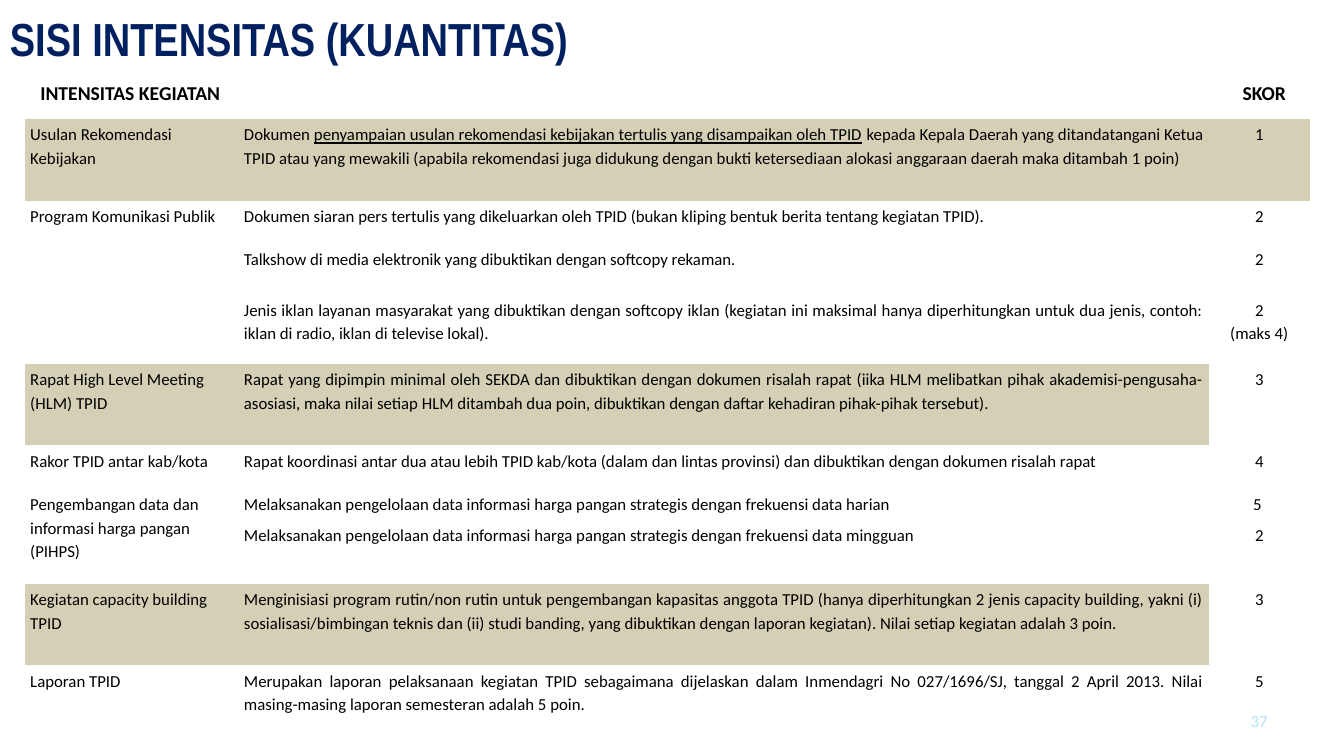
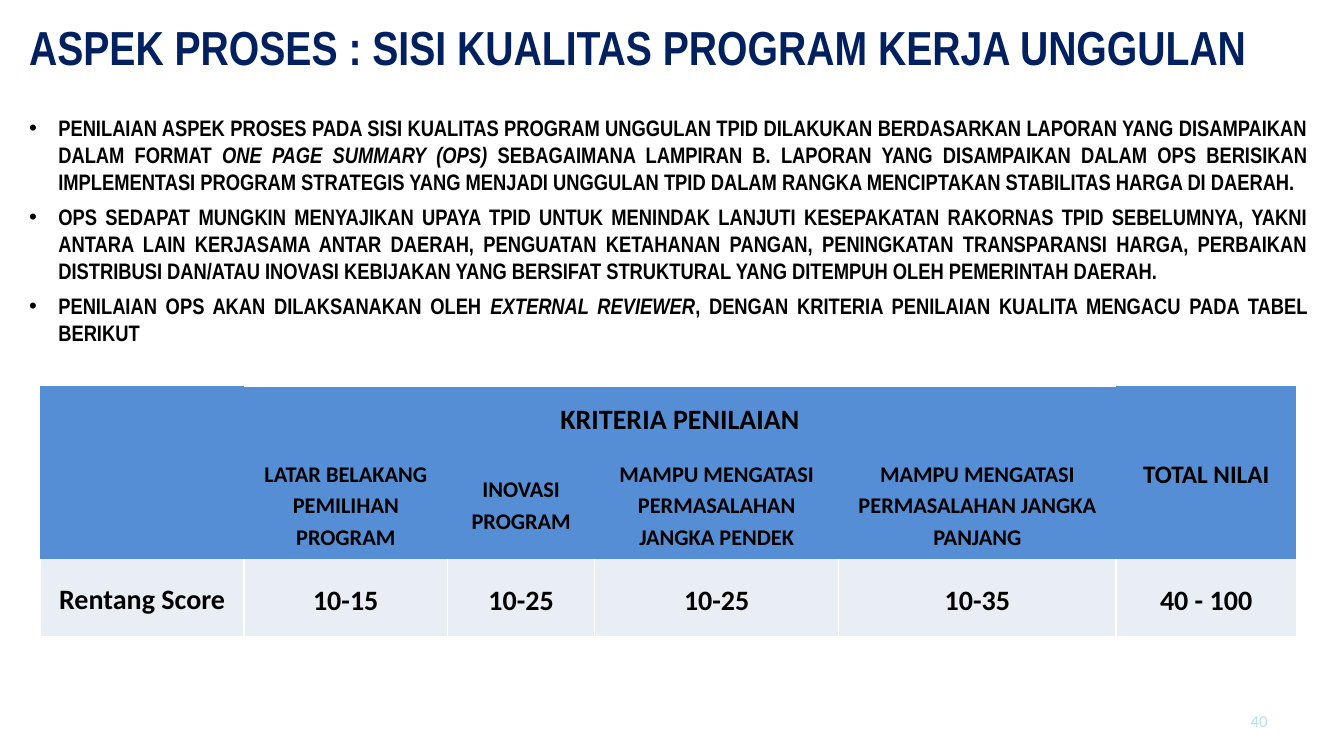
from pptx import Presentation as Deck
from pptx.dml.color import RGBColor as Rgb
from pptx.enum.text import MSO_ANCHOR as Anchor, PP_ALIGN as Align
from pptx.oxml.ns import qn
from pptx.util import Inches, Pt
from lxml.etree import SubElement as Sub

HUES = {"navy": "002060", "black": "000000", "pale": "B1E2FB", "sand": "D5D0B5",
        "blue": "558ED5", "mist": "E9EDF4", "white": "FFFFFF"}
BARE = "{2D5ABB26-0587-4C30-8999-92F81FD0307C}"  # table style without fill or grid
HEAD, BODY = "Arial Narrow", "Calibri"
EDGES = {"l": "a:lnL", "r": "a:lnR", "t": "a:lnT", "b": "a:lnB"}

# Texts: parts between bars carry the mark (underline or italic)
TASKS = [
    ("Usulan Rekomendasi Kebijakan",
     "Dokumen |penyampaian usulan rekomendasi kebijakan tertulis yang disampaikan oleh TPID"
     "| kepada Kepala Daerah yang ditandatangani Ketua TPID atau yang mewakili (apabila "
     "rekomendasi juga didukung dengan bukti ketersediaan alokasi anggaraan daerah maka "
     "ditambah 1 poin)", "1", 0.81),
    ("Program Komunikasi Publik",
     "Dokumen siaran pers tertulis yang dikeluarkan oleh TPID (bukan kliping bentuk berita "
     "tentang kegiatan TPID).", "2", 0.43),
    ("", "Talkshow di media elektronik yang dibuktikan dengan softcopy rekaman.", "2", 0.5),
    ("", "Jenis iklan layanan masyarakat yang dibuktikan dengan softcopy iklan (kegiatan ini "
     "maksimal hanya diperhitungkan untuk dua jenis, contoh: iklan di radio, iklan di "
     "televise lokal).", "2\n(maks 4)", 0.69),
    ("Rapat High Level Meeting (HLM) TPID",
     "Rapat yang dipimpin minimal oleh SEKDA dan dibuktikan dengan dokumen risalah rapat "
     "(iika HLM melibatkan pihak akademisi-pengusaha-asosiasi, maka nilai setiap HLM ditambah "
     "dua poin, dibuktikan dengan daftar kehadiran pihak-pihak tersebut).", "3", 0.81),
    ("Rakor TPID antar kab/kota",
     "Rapat koordinasi antar dua atau lebih TPID kab/kota (dalam dan lintas provinsi) dan "
     "dibuktikan dengan dokumen risalah rapat", "4", 0.43),
    ("Pengembangan data dan informasi harga pangan (PIHPS)",
     "Melaksanakan pengelolaan data informasi harga pangan strategis dengan frekuensi data "
     "harian", "5 ", 0.3 + 0.13),
    ("", "Melaksanakan pengelolaan data informasi harga pangan strategis dengan frekuensi data "
     "mingguan", "2", 0.64),
    ("Kegiatan capacity building TPID",
     "Menginisiasi program rutin/non rutin untuk pengembangan kapasitas anggota TPID (hanya "
     "diperhitungkan 2 jenis capacity building, yakni (i) sosialisasi/bimbingan teknis dan "
     "(ii) studi banding, yang dibuktikan dengan laporan kegiatan). Nilai setiap kegiatan "
     "adalah 3 poin.", "3", 0.81),
    ("Laporan TPID",
     "Merupakan laporan pelaksanaan kegiatan TPID sebagaimana dijelaskan dalam Inmendagri No "
     "027/1696/SJ, tanggal 2 April 2013. Nilai masing-masing laporan semesteran adalah 5 poin.",
     "5", 0.56),
]
TASKS[6] = TASKS[6][:3] + (0.3,)
SHADED = {1, 5, 9}

NOTES = [
    "PENILAIAN ASPEK PROSES PADA SISI KUALITAS PROGRAM UNGGULAN TPID DILAKUKAN BERDASARKAN "
    "LAPORAN YANG DISAMPAIKAN DALAM FORMAT |ONE PAGE SUMMARY (OPS)| SEBAGAIMANA LAMPIRAN B. "
    "LAPORAN YANG DISAMPAIKAN DALAM OPS BERISIKAN IMPLEMENTASI PROGRAM STRATEGIS YANG MENJADI "
    "UNGGULAN TPID DALAM RANGKA MENCIPTAKAN STABILITAS HARGA DI DAERAH.",
    "OPS SEDAPAT MUNGKIN MENYAJIKAN UPAYA TPID UNTUK MENINDAK LANJUTI KESEPAKATAN RAKORNAS "
    "TPID SEBELUMNYA, YAKNI ANTARA LAIN KERJASAMA ANTAR DAERAH, PENGUATAN KETAHANAN PANGAN, "
    "PENINGKATAN TRANSPARANSI HARGA, PERBAIKAN DISTRIBUSI DAN/ATAU INOVASI KEBIJAKAN YANG "
    "BERSIFAT STRUKTURAL YANG DITEMPUH OLEH PEMERINTAH DAERAH.",
    "PENILAIAN OPS AKAN DILAKSANAKAN OLEH |EXTERNAL REVIEWER|, DENGAN KRITERIA PENILAIAN "
    "KUALITA MENGACU PADA TABEL BERIKUT",
]
TESTS = ["LATAR BELAKANG PEMILIHAN PROGRAM", "INOVASI PROGRAM",
         "MAMPU MENGATASI PERMASALAHAN JANGKA PENDEK",
         "MAMPU MENGATASI PERMASALAHAN JANGKA PANJANG"]
SCORES = ["Rentang Score", "10-15", "10-25", "10-25", "10-35", "40 - 100"]


def put(thing, vals):
    for key, val in vals.items():
        setattr(thing, key, val)


def tint(fill, hue):
    fill.solid()
    fill.fore_color.rgb = Rgb.from_string(HUES[hue])


def write(frame, text, size, face=BODY, hue="black", bold=False, mark="italic", **para):
    """Fill a frame, one paragraph a line."""
    for i, line in enumerate(text.split("\n")):
        p = frame.add_paragraph() if i else frame.paragraphs[0]
        put(p, para)
        for j, part in enumerate(line.split("|")):
            run = p.add_run()
            run.text = part
            put(run.font, {"size": Pt(size), "name": face, "bold": bold})
            run.font.color.rgb = Rgb.from_string(HUES[hue])
            if j % 2:
                setattr(run.font, mark, True)


def label(slide, box, text, size, **look):
    frame = slide.shapes.add_textbox(*map(Inches, box)).text_frame
    put(frame, {"word_wrap": True, "vertical_anchor": Anchor.MIDDLE})
    write(frame, text, size, **look)
    return frame


def frame_up(deck, title, box, size, page):
    """New slide with title and page number."""
    slide = deck.slides.add_slide(deck.slide_layouts[6])
    label(slide, box, title, size, face=HEAD, hue="navy", bold=True)
    label(slide, (9.56, 6.95, 3.11, 0.4), page, 12, hue="pale", alignment=Align.RIGHT)
    return slide


def grid(slide, spot, cols, rows, pad):
    """Plain table with its sizes and cell margins set."""
    box = (*spot, sum(cols), sum(rows))
    table = slide.shapes.add_table(len(rows), len(cols), *map(Inches, box)).table
    table._tbl.tblPr.find(qn("a:tableStyleId")).text = BARE
    put(table, {"first_row": False, "horz_banding": False})
    for col, wide in zip(table.columns, cols):
        col.width = Inches(wide)
    for row, high in zip(table.rows, rows):
        row.height = Inches(high)
    side, top = map(Inches, pad)
    for cell in table.iter_cells():
        put(cell, {"margin_left": side, "margin_right": side,
                   "margin_top": top, "margin_bottom": top})
    return table


def edge(cell, sides):
    """White hairlines, set ahead of the cell's fill."""
    props = cell._tc.get_or_add_tcPr()
    for i, side in enumerate(sides):
        line = Sub(props, qn(EDGES[side]), w="12700")
        Sub(Sub(line, qn("a:solidFill")), qn("a:srgbClr"), val=HUES["white"])
        props.insert(i, line)


def bullets(slide, box, notes):
    frame = label(slide, box, "\n".join(notes), 16, face=HEAD, bold=True,
                  alignment=Align.JUSTIFY)
    for i, p in enumerate(frame.paragraphs):
        p.space_before = Pt(6 if i else 0)
        props = p._p.get_or_add_pPr()
        props.set("marL", str(Inches(0.29)))
        props.set("indent", str(-Inches(0.29)))
        Sub(props, qn("a:buFont"), typeface="Arial")
        Sub(props, qn("a:buChar"), char="•")


def task_grid(slide, spot):
    """Activities with their scores."""
    rows = [0.43] + [task[3] for task in TASKS]
    table = grid(slide, spot, [2.12, 9.62, 1], rows, (0.05, 0.03))
    for first, last in [((0, 0), (0, 1)), ((2, 0), (4, 0)), ((7, 0), (8, 0))]:
        table.cell(*first).merge(table.cell(*last))
    for c, text, side in [(0, "INTENSITAS KEGIATAN", Align.LEFT), (2, "SKOR", Align.CENTER)]:
        cell = table.cell(0, c)
        cell.margin_left = Inches(0.15)
        write(cell.text_frame, text, 14, bold=True, line_spacing=1.15, alignment=side)
    sides = [Align.LEFT, Align.JUSTIFY, Align.CENTER]
    for r, task in enumerate(TASKS, 1):
        for c, side in enumerate(sides):
            cell = table.cell(r, c)
            if task[c]:
                write(cell.text_frame, task[c], 12, mark="underline",
                      line_spacing=1.15, alignment=side)
            if r in SHADED and (c < 2 or r == 1):
                tint(cell.fill, "sand")


def score_grid(slide, spot):
    """Criteria with their score ranges."""
    table = grid(slide, spot, [2.02, 2.02, 1.46, 2.42, 2.75, 1.79], [0.62, 1.1, 0.77], (0.07, 0))
    for first, last in [((0, 0), (1, 0)), ((0, 1), (0, 4)), ((0, 5), (1, 5))]:
        table.cell(*first).merge(table.cell(*last))
    parts = {(0, 1): ("KRITERIA PENILAIAN", 20), (0, 5): ("TOTAL NILAI", 18)}
    parts.update({(1, c): (text, 16) for c, text in enumerate(TESTS, 1)})
    parts.update({(2, c): (text, 20) for c, text in enumerate(SCORES)})
    for (r, c), (text, size) in parts.items():
        cell = table.cell(r, c)
        cell.vertical_anchor = Anchor.MIDDLE
        write(cell.text_frame, text, size, bold=True, line_spacing=1.15, alignment=Align.CENTER)
    put(table.cell(2, 0), {"vertical_anchor": Anchor.TOP, "margin_top": Inches(0.18)})
    for r, hue in enumerate(["blue", "blue", "mist"]):
        for c in range(6):
            cell = table.cell(r, c)
            tint(cell.fill, hue)
            if r == 2:
                edge(cell, "lrb")
            elif r == 0 and 0 < c < 5:
                edge(cell, "t")


def main():
    deck = Deck()
    put(deck, {"slide_width": Inches(13.33), "slide_height": Inches(7.5)})

    # Quantity
    slide = frame_up(deck, "SISI INTENSITAS (KUANTITAS)", (0, 0, 12.45, 0.75), 33.1, "37")
    task_grid(slide, (0.25, 0.75))

    # Quality
    slide = frame_up(deck, "ASPEK PROSES : SISI KUALITAS PROGRAM KERJA UNGGULAN",
                     (0.19, -0.08, 12.45, 1.08), 34.1, "40")
    bullets(slide, (0.19, 0.94, 12.88, 2.69), NOTES)
    score_grid(slide, (0.4, 3.83))

    deck.save("out.pptx")


if __name__ == "__main__":
    main()
